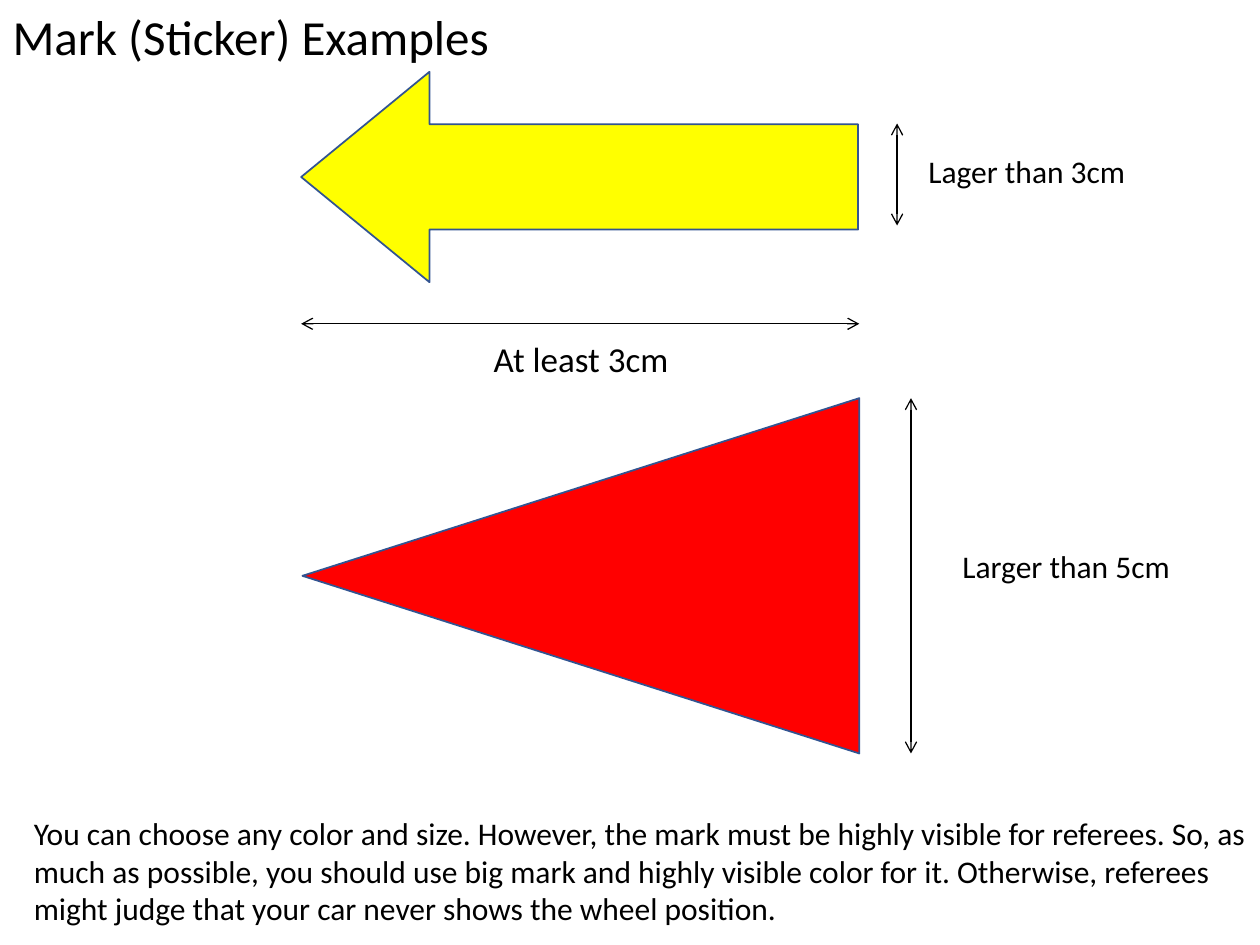
"""Build the slide of mark (sticker) examples with their sizes."""
from dataclasses import dataclass

from lxml import etree
from pptx import Presentation
from pptx.dml.color import RGBColor
from pptx.enum import shapes as kinds, text as txt
from pptx.oxml import ns
from pptx.util import Inches, Pt

BLACK = RGBColor(0x00, 0x00, 0x00)
YELLOW = RGBColor(0xFF, 0xFF, 0x00)
RED = RGBColor(0xFF, 0x00, 0x00)
BLUE = RGBColor(0x32, 0x54, 0x91)
FONT = "Calibri"
LEFT, RIGHT = 2.39, 6.82


@dataclass
class Box:
    left: float
    top: float
    width: float
    height: float

    def place(self) -> tuple:
        return tuple(Inches(v) for v in (self.left, self.top, self.width, self.height))


@dataclass
class Label:
    text: str
    box: Box
    size: int = 18
    wrap: bool = False


@dataclass
class Mark:
    kind: kinds.MSO_SHAPE
    box: Box
    fill: RGBColor
    turn: int = 0
    adjust: tuple = ()


@dataclass
class Span:
    x1: float
    y1: float
    x2: float
    y2: float


MARKS = [
    Mark(kinds.MSO_SHAPE.LEFT_ARROW, Box(LEFT, 0.57, 4.42, 1.67), YELLOW,
         adjust=(0.5, 0.61)),
    Mark(kinds.MSO_SHAPE.FLOWCHART_EXTRACT, Box(3.2, 2.36, 2.82, 4.42), RED, turn=270),
]
SPANS = [
    Span(LEFT, 2.57, RIGHT, 2.57),
    Span(7.12, 0.98, 7.12, 1.79),
    Span(7.23, 3.16, 7.23, 5.98),
]
TITLE = Label("Mark (Sticker) Examples", Box(0, 0, 4.02, 0.57), 28)
LABELS = [
    Label("At least 3cm", Box(3.82, 2.63, 1.67, 0.44), 20),
    Label("Lager than 3cm", Box(7.27, 1.16, 1.78, 0.4)),
    Label("Larger than 5cm", Box(7.54, 4.29, 1.87, 0.4)),
    Label("You can choose any color and size. However, the mark must be highly "
          "visible for referees. So, as much as possible, you should use big mark "
          "and highly visible color for it. Otherwise, referees might judge that "
          "your car never shows the wheel position.",
          Box(0.17, 6.41, 9.83, 1.01), wrap=True),
]


def write(shape, label: Label) -> None:
    """Fill a text shape with a label and format it."""
    shape.left, shape.top, shape.width, shape.height = label.box.place()
    frame = shape.text_frame
    frame.text = label.text
    frame.word_wrap = label.wrap
    frame.auto_size = txt.MSO_AUTO_SIZE.SHAPE_TO_FIT_TEXT
    frame.vertical_anchor = txt.MSO_ANCHOR.TOP
    para = frame.paragraphs[0]
    para.alignment = txt.PP_ALIGN.LEFT
    font = para.runs[0].font
    font.name, font.size = FONT, Pt(label.size)
    font.color.rgb = BLACK


def draw_mark(slide, mark: Mark) -> None:
    """Draw one sticker."""
    shape = slide.shapes.add_shape(mark.kind, *mark.box.place())
    shape.shadow.inherit = False
    shape.rotation = mark.turn
    for i, value in enumerate(mark.adjust):
        shape.adjustments[i] = value
    shape.fill.solid()
    shape.fill.fore_color.rgb = mark.fill
    shape.line.color.rgb = BLUE
    shape.line.width = Pt(1)


def draw_span(slide, span: Span) -> None:
    """Draw a dimension line with an open arrowhead at each end."""
    ends = (Inches(v) for v in (span.x1, span.y1, span.x2, span.y2))
    line = slide.shapes.add_connector(kinds.MSO_CONNECTOR.STRAIGHT, *ends)
    line.line.color.rgb = BLACK
    line.line.width = Pt(0.75)
    props = line.line._get_or_add_ln()
    for tag in ("a:headEnd", "a:tailEnd"):
        etree.SubElement(props, ns.qn(tag), type="arrow")
    etree.SubElement(line._element.spPr, ns.qn("a:effectLst"))


def main() -> None:
    """Assemble and save the slide."""
    deck = Presentation()
    deck.slide_width, deck.slide_height = Inches(10), Inches(7.5)
    slide = deck.slides.add_slide(deck.slide_layouts.get_by_name("Title Only"))
    write(slide.shapes.title, TITLE)
    for mark in MARKS:
        draw_mark(slide, mark)
    for span in SPANS:
        draw_span(slide, span)
    for label in LABELS:
        write(slide.shapes.add_textbox(*label.box.place()), label)
    deck.save("out.pptx")


if __name__ == "__main__":
    main()
